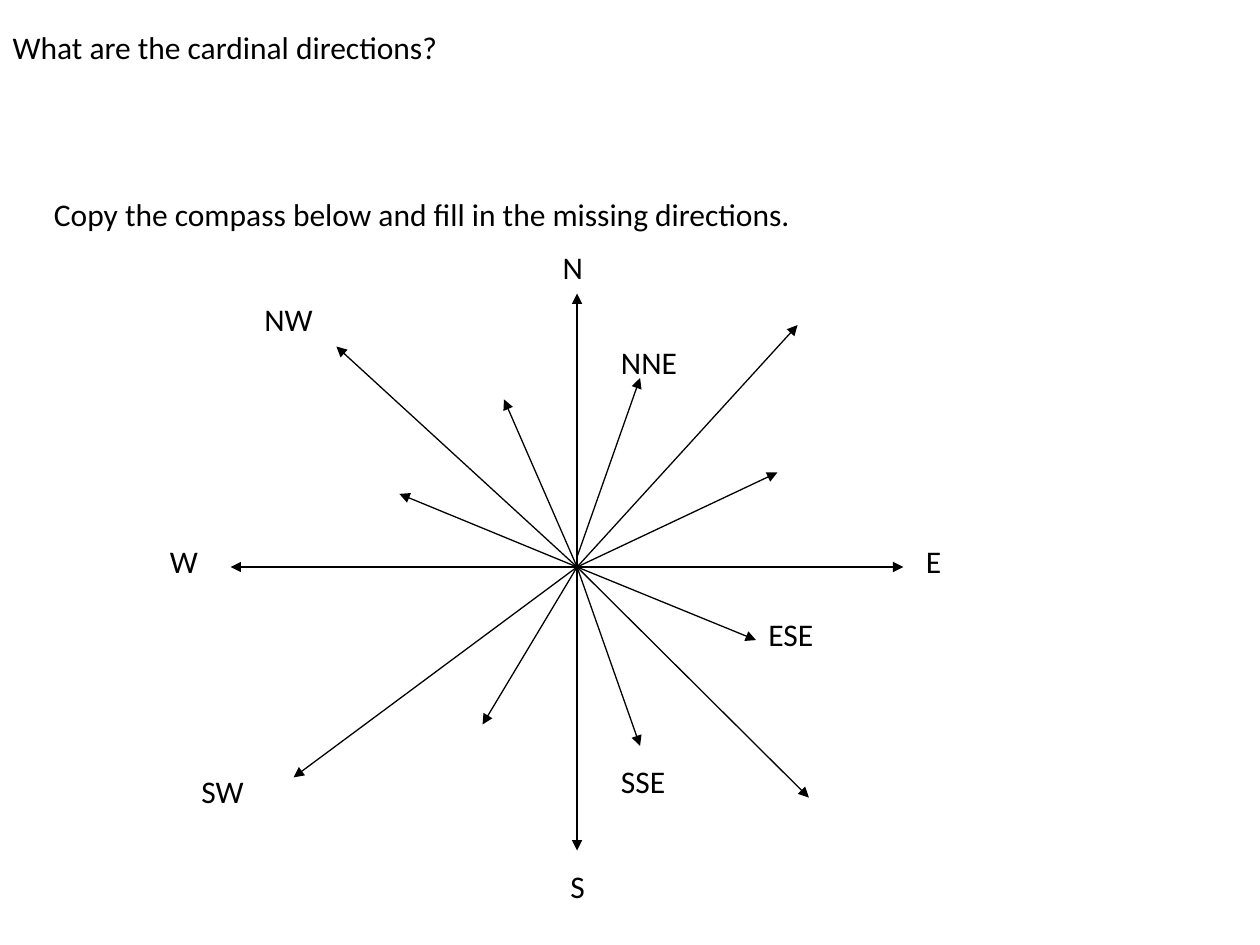
from pptx import Presentation
from pptx.dml.color import RGBColor
from pptx.enum.shapes import MSO_CONNECTOR
from pptx.enum.text import MSO_ANCHOR, MSO_AUTO_SIZE, PP_ALIGN
from pptx.oxml.ns import qn
from pptx.util import Inches, Pt
from lxml import etree

BLACK = RGBColor(0, 0, 0)
STRAIGHT = MSO_CONNECTOR.STRAIGHT
TOP = MSO_ANCHOR.TOP
FIT = MSO_AUTO_SIZE.SHAPE_TO_FIT_TEXT
LEFT, CENTER = PP_ALIGN.LEFT, PP_ALIGN.CENTER

HUB = (4.58, 4.5)
TIPS = [
    (4.58, 2.33), (4.58, 6.75), (7.17, 4.5), (1.83, 4.5),
    (6.33, 2.58), (6.42, 6.33), (2.33, 6.17), (2.67, 2.75),
    (6.17, 3.75), (6, 5.08), (5.08, 5.92),
    (3.83, 5.75), (3.17, 3.92), (4, 3.17),
]
LABELS = [
    ("S", 4.25, 6.83, 0.67, CENTER),
    ("E", 7.25, 4.25, 0.58, LEFT),
    ("NW", 2, 2.33, 0.67, LEFT),
    ("NNE", 4.83, 2.67, 0.75, LEFT),
    ("ESE", 6, 4.83, 0.83, LEFT),
    ("SSE", 4.83, 6, 0.83, LEFT),
    ("SW", 1.5, 6.08, 0.83, LEFT),
    ("N", 4.17, 1.92, 0.75, CENTER),
    ("W", 1.25, 4.25, 0.58, LEFT),
]


class Sheet:
    font, size, color, weight = "Calibri", Pt(18), BLACK, Pt(0.75)

    def __init__(self, slide):
        self.slide = slide

    def style(self, shape, text, align):
        frame = shape.text_frame
        frame.text = text
        frame.word_wrap = True
        frame.auto_size = FIT
        frame.vertical_anchor = TOP
        para = frame.paragraphs[0]
        para.alignment = align
        para.font.name = self.font
        para.font.size = self.size
        para.font.color.rgb = self.color

    def title(self, text, x, y, w, h):
        shape = self.slide.shapes.title
        shape.left, shape.top = Inches(x), Inches(y)
        shape.width, shape.height = Inches(w), Inches(h)
        self.style(shape, text, LEFT)

    def label(self, text, x, y, w, align=LEFT, h=0.4):
        box = self.slide.shapes.add_textbox(
            Inches(x), Inches(y), Inches(w), Inches(h))
        self.style(box, text, align)

    def arrow(self, start, end):
        line = self.slide.shapes.add_connector(
            STRAIGHT, *(Inches(v) for v in (*start, *end)))
        line.line.color.rgb = self.color
        line.line.width = self.weight
        props = line._element.spPr
        etree.SubElement(props.find(qn("a:ln")), qn("a:tailEnd"),
                         type="triangle")
        etree.SubElement(props, qn("a:effectLst"))


def main():
    deck = Presentation()
    deck.slide_width, deck.slide_height = Inches(10), Inches(7.5)
    sheet = Sheet(deck.slides.add_slide(deck.slide_layouts[5]))
    sheet.title("What are the cardinal directions?", 0, 0.17, 9.58, 0.85)
    sheet.label("Copy the compass below and fill in the missing directions.",
                0.33, 1.5, 8.33, h=0.85)
    for tip in TIPS:
        sheet.arrow(HUB, tip)
    sheet.arrow((4.58, 4.42), (5.08, 3))
    for label in LABELS:
        sheet.label(*label)
    deck.save("out.pptx")


if __name__ == "__main__":
    main()
